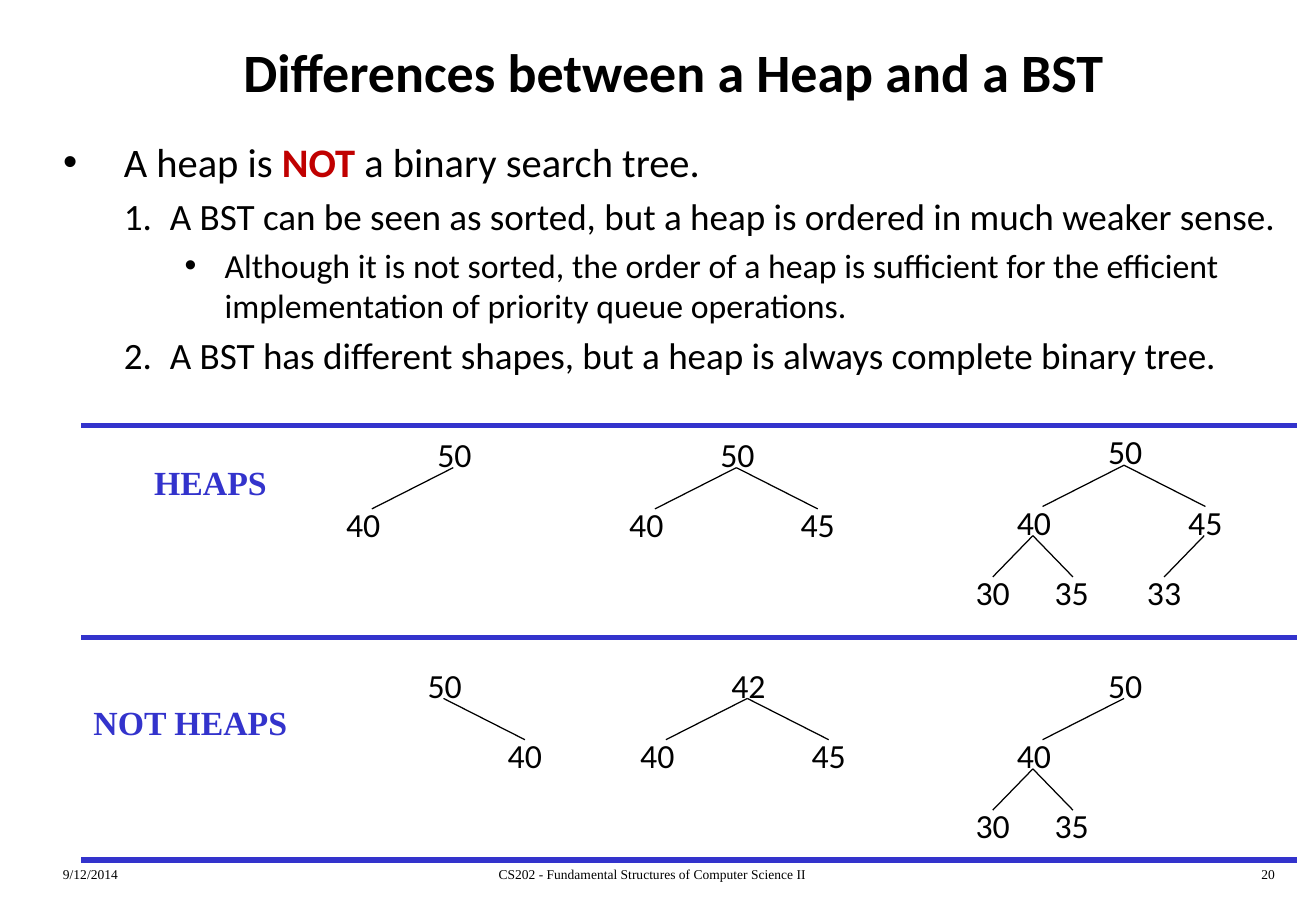
from lxml import etree
from pptx import Presentation
from pptx.dml.color import RGBColor
from pptx.enum.shapes import MSO_CONNECTOR
from pptx.enum.text import MSO_ANCHOR, PP_ALIGN
from pptx.oxml.ns import qn
from pptx.util import Inches, Pt

STRAIGHT = MSO_CONNECTOR.STRAIGHT
MIDDLE = MSO_ANCHOR.MIDDLE
LEFT, CENTER, RIGHT = PP_ALIGN.LEFT, PP_ALIGN.CENTER, PP_ALIGN.RIGHT
BLACK = RGBColor(0x00, 0x00, 0x00)
BLUE = RGBColor(0x33, 0x33, 0xCC)
RED = RGBColor(0xC0, 0x00, 0x00)
SANS, SERIF = "Calibri", "Times New Roman"

# Outline level: size, left margin, hanging indent, bullet element, its attribute
LEVELS = [
    (24, 0.5, 0.5, "a:buChar", ("char", "•")),
    (22, 0.88, 0.38, "a:buAutoNum", ("type", "arabicPeriod")),
    (20, 1.33, 0.33, "a:buChar", ("char", "•")),
]
POINTS = [
    (0, [("A heap is ", BLACK, False), ("NOT", RED, True),
         (" a binary search tree.", BLACK, False)]),
    (1, [("A BST can be seen as sorted, but a heap is ordered in much weaker sense.",
          BLACK, False)]),
    (2, [("Although it is not sorted, the order of a heap is sufficient for the "
          "efficient implementation of priority queue operations.", BLACK, False)]),
    (1, [("A BST has different shapes, but a heap is always complete binary tree.",
          BLACK, False)]),
]

# A tree is (key, left subtree, right subtree), placed by its root's offset in the band
HEAPS = [
    (2.83, 0.02, ("50", ("40",), None)),
    (5.16, 0.02, ("50", ("40",), ("45",))),
    (8.35, 0, ("50", ("40", ("30",), ("35",)), ("45", ("33",), None))),
]
NOT_HEAPS = [
    (2.75, 0.17, ("50", None, ("40",))),
    (5.25, 0.17, ("42", ("40",), ("45",))),
    (8.35, 0.17, ("50", ("40", ("30",), ("35",)), None)),
]
# Per depth: shift of left key, shift of right key, reach of a branch
SPREAD = [(-0.75, 0.66, 0.67), (-0.34, 0.31, 0.33)]
KEY_W, KEY_H, KEY_DROP = 0.48, 0.44, 0.58
BRANCH_X, BRANCH_Y, BRANCH_H = 0.23, 0.33, 0.34


def add_run(paragraph, text, size, font, color=BLACK, bold=False):
    run = paragraph.add_run()
    run.text = text
    run.font.size = Pt(size)
    run.font.name = font
    run.font.bold = bold
    run.font.color.rgb = color


def add_box(shapes, left, top, width, height, wrap=True):
    box = shapes.add_textbox(Inches(left), Inches(top), Inches(width), Inches(height))
    box.text_frame.word_wrap = wrap
    return box.text_frame


def add_line(shapes, x1, y1, x2, y2, color, width):
    line = shapes.add_connector(STRAIGHT, Inches(x1), Inches(y1), Inches(x2), Inches(y2))
    line.line.color.rgb = color
    line.line.width = Pt(width)
    etree.SubElement(line._element.spPr, qn("a:effectLst"))


def add_title(shapes, left, top, width, height):
    frame = add_box(shapes, left, top, width, height)
    frame.vertical_anchor = MIDDLE
    frame.paragraphs[0].alignment = CENTER
    add_run(frame.paragraphs[0], "Differences between a Heap and a BST", 32, SANS, bold=True)


def add_outline(shapes, left, top, width, height):
    frame = add_box(shapes, left, top, width, height)
    for index, (level, runs) in enumerate(POINTS):
        point = frame.add_paragraph() if index else frame.paragraphs[0]
        size, margin, hanging, bullet, (attribute, value) = LEVELS[level]
        point.level = level
        point.space_before = Pt(size * 0.2)
        properties = point._p.get_or_add_pPr()
        properties.set("marL", str(Inches(margin)))
        properties.set("indent", str(Inches(-hanging)))
        etree.SubElement(properties, qn("a:buFont")).set("typeface", "Arial")
        etree.SubElement(properties, qn(bullet)).set(attribute, value)
        for text, color, bold in runs:
            add_run(point, text, size, SANS, color, bold)


def add_tree(shapes, left, top, tree, depth=0):
    key, *subtrees = tree
    frame = add_box(shapes, left, top, KEY_W, KEY_H, wrap=False)
    add_run(frame.paragraphs[0], key, 20, SANS)
    for side, subtree in enumerate(subtrees):
        if subtree:
            *shifts, reach = SPREAD[depth]
            x, y = left + BRANCH_X, top + BRANCH_Y
            add_line(shapes, x, y, x + (reach if side else -reach), y + BRANCH_H, BLACK, 0.75)
            add_tree(shapes, left + shifts[side], top + KEY_DROP, subtree, depth + 1)


def add_band(shapes, left, top, label, label_x, label_y, label_w, trees):
    band = shapes.add_group_shape().shapes
    frame = add_box(band, left + label_x, top + label_y, label_w, KEY_H, wrap=False)
    add_run(frame.paragraphs[0], label, 20, SERIF, BLUE, True)
    for x, y, tree in trees:
        add_tree(band, left + x, top + y, tree)


def add_footer(shapes, top, height):
    for left, width, text, alignment in [
        (0.42, 2.26, "9/12/2014", LEFT),
        (3.34, 4.06, "CS202 - Fundamental Structures of Computer Science II", CENTER),
        (8.33, 2.26, "20", RIGHT),
    ]:
        paragraph = add_box(shapes, left, top, width, height).paragraphs[0]
        paragraph.alignment = alignment
        add_run(paragraph, text, 8, SERIF)


def main():
    deck = Presentation()
    deck.slide_width, deck.slide_height = Inches(10.83), Inches(7.5)
    shapes = deck.slides.add_slide(deck.slide_layouts[6]).shapes

    add_footer(shapes, 7.08, 0.25)
    add_title(shapes, 0.42, 0.17, 10.25, 0.83)
    add_outline(shapes, 0.42, 1.08, 10.42, 2.3)

    # Bands of example trees and the rules around them
    add_band(shapes, 0.67, 3.5, "HEAPS", 0.5, 0.25, 1.14, HEAPS)
    add_band(shapes, 0.67, 5.25, "NOT HEAPS", 0, 0.48, 1.81, NOT_HEAPS)
    for y in (3.5, 5.25, 7.08):
        add_line(shapes, 0.67, y, 10.67, y, BLUE, 3)

    deck.save("out.pptx")


if __name__ == "__main__":
    main()
